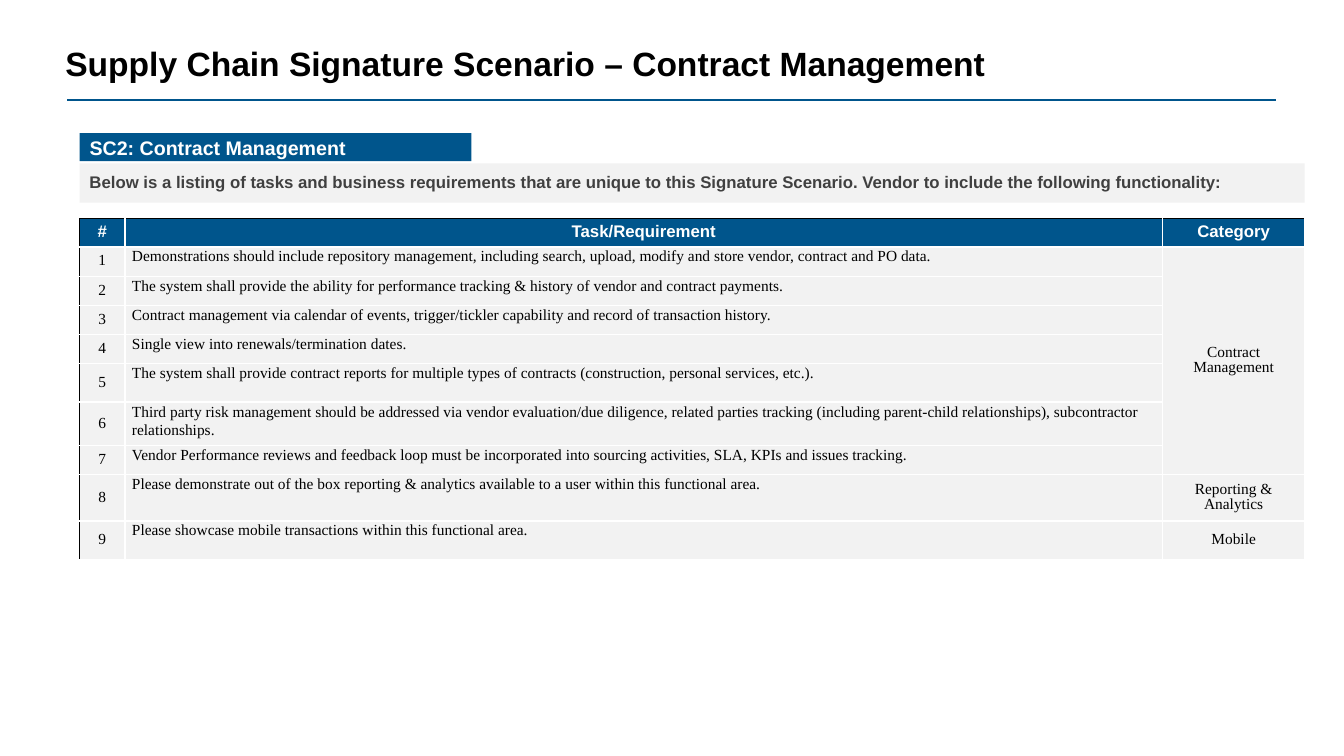
from lxml.etree import SubElement as Sub
from pptx import Presentation
from pptx.dml.color import RGBColor as Rgb
from pptx.enum.shapes import MSO_CONNECTOR as Conn, MSO_SHAPE as Form
from pptx.enum.text import MSO_ANCHOR as Anchor, PP_ALIGN as Align
from pptx.oxml.ns import qn
from pptx.util import Pt

SCALE = 9144  # EMU per px, 100 px to the inch
BLUE, GREY, WHITE, BLACK, DARK = "00558C", "F2F2F2", "FFFFFF", "000000", "404040"

HEAD = ["#", "Task/Requirement", "Category"]
TASKS = [
    "Demonstrations should include repository management, including search, upload, modify and store vendor, contract and PO data.",
    "The system shall provide the ability for performance tracking & history of vendor and contract payments.",
    "Contract management via calendar of events, trigger/tickler capability and record of transaction history.",
    "Single view into renewals/termination dates.",
    "The system shall provide contract reports for multiple types of contracts (construction, personal services, etc.).",
    "Third party risk management should be addressed via vendor evaluation/due diligence, related parties tracking (including parent-child relationships), subcontractor relationships.",
    "Vendor Performance reviews and feedback loop must be incorporated into sourcing activities, SLA, KPIs and issues tracking.",
    "Please demonstrate out of the box reporting & analytics available to a user within this functional area.",
    "Please showcase mobile transactions within this functional area.",
]
GROUPS = {1: "Contract Management", 8: "Reporting & Analytics", 9: "Mobile"}
COLS = [45, 1030, 141]
ROWS = [28, 29, 29, 29, 29, 38, 43, 29, 46, 38]


def px(num):
    return int(num * SCALE)


def tint(code):
    return Rgb.from_string(code)


class Deck:
    """Holds the text styles and the current slide."""

    fonts = {
        "title": {"name": "Arial", "size": Pt(24), "bold": True, "color": BLACK},
        "label": {"name": "Arial", "size": Pt(14), "bold": True, "color": WHITE},
        "intro": {"name": "Arial", "size": Pt(12), "bold": True, "color": DARK},
        "head": {"name": "Arial", "size": Pt(12), "bold": True, "color": WHITE},
        "body": {"name": "Times New Roman", "size": Pt(11), "bold": False, "color": BLACK},
    }

    def __init__(self, wide, high):
        self.show = Presentation()
        self.show.slide_width, self.show.slide_height = px(wide), px(high)
        self.slide = self.show.slides.add_slide(self.show.slide_layouts[6])

    def label(self, frame, text, style, **form):
        """Fill a text frame; form holds paragraph attributes."""
        frame.word_wrap = True
        para = frame.paragraphs[0]
        run = para.add_run()
        run.text = text
        for key, val in form.items():
            setattr(para, key, val)
        for key, val in self.fonts[style].items():
            if key == "color":
                run.font.color.rgb = tint(val)
            else:
                setattr(run.font, key, val)

    def text(self, box, text, style, **form):
        item = self.slide.shapes.add_textbox(*map(px, box))
        self.label(item.text_frame, text, style, **form)

    def bar(self, box, fill):
        item = self.slide.shapes.add_shape(Form.RECTANGLE, *map(px, box))
        item.shadow.inherit = False
        item.fill.solid()
        item.fill.fore_color.rgb = tint(fill)
        item.line.fill.background()
        return item

    def rule(self, ends, color, width):
        item = self.slide.shapes.add_connector(Conn.STRAIGHT, *map(px, ends))
        item.line.color.rgb = tint(color)
        item.line.width = Pt(width)
        Sub(item.element.spPr, qn("a:effectLst"))

    def edge(self, cell, row, col):
        """White cell borders, black along the table's left and top."""
        props = cell._tc.get_or_add_tcPr()
        for side in "LRTB":
            dark = side == "T" and row == 0 or side == "L" and col == 0
            line = Sub(props, qn(f"a:ln{side}"), w=str(Pt(1)))
            fill = Sub(line, qn("a:solidFill"))
            Sub(fill, qn("a:srgbClr"), val=BLACK if dark else WHITE)

    def cell(self, cell, row, col, text):
        self.edge(cell, row, col)
        cell.fill.solid()
        cell.fill.fore_color.rgb = tint(GREY if row else BLUE)
        task = row > 0 and col == 1
        side, rim = (px(7), 0) if task else (px(5), px(5))
        look = {
            "margin_left": side, "margin_right": side,
            "margin_top": rim, "margin_bottom": rim,
            "vertical_anchor": Anchor.TOP if task else Anchor.MIDDLE,
        }
        for key, val in look.items():
            setattr(cell, key, val)
        if text:
            form = {"line_spacing": 1.07} if task else {
                "line_spacing": Pt(11), "alignment": Align.CENTER}
            self.label(cell.text_frame, text, "body" if row else "head", **form)

    def table(self, left, top, data, cols, rows):
        box = map(px, (left, top, sum(cols), sum(rows)))
        grid = self.slide.shapes.add_table(len(rows), len(cols), *box).table
        for col, wide in zip(grid.columns, cols):
            col.width = px(wide)
        for row, high in zip(grid.rows, rows):
            row.height = px(high)
        for row, line in enumerate(data):
            for col, text in enumerate(line):
                self.cell(grid.cell(row, col), row, col, text)
        return grid


def main():
    deck = Deck(1334, 750)
    deck.rule((67, 99, 1267, 99), BLUE, 1.5)
    deck.text((55, 42, 1201, 65), "Supply Chain Signature Scenario – Contract Management",
              "title", line_spacing=0.9)
    deck.bar((79, 162, 1216, 39), GREY)
    tab = deck.bar((79, 132, 389, 28), BLUE)
    tab.text_frame.vertical_anchor = Anchor.MIDDLE
    deck.label(tab.text_frame, "SC2: Contract Management", "label", alignment=Align.LEFT)

    data = [HEAD] + [[str(num), task, GROUPS.get(num, "")]
                     for num, task in enumerate(TASKS, 1)]
    grid = deck.table(79, 217, data, COLS, ROWS)
    grid.cell(1, 2).merge(grid.cell(7, 2))

    deck.text((79, 165, 1216, 30),
              "Below is a listing of tasks and business requirements that are unique to this Signature Scenario. Vendor to include the following functionality:",
              "intro")
    deck.show.save("out.pptx")


if __name__ == "__main__":
    main()
